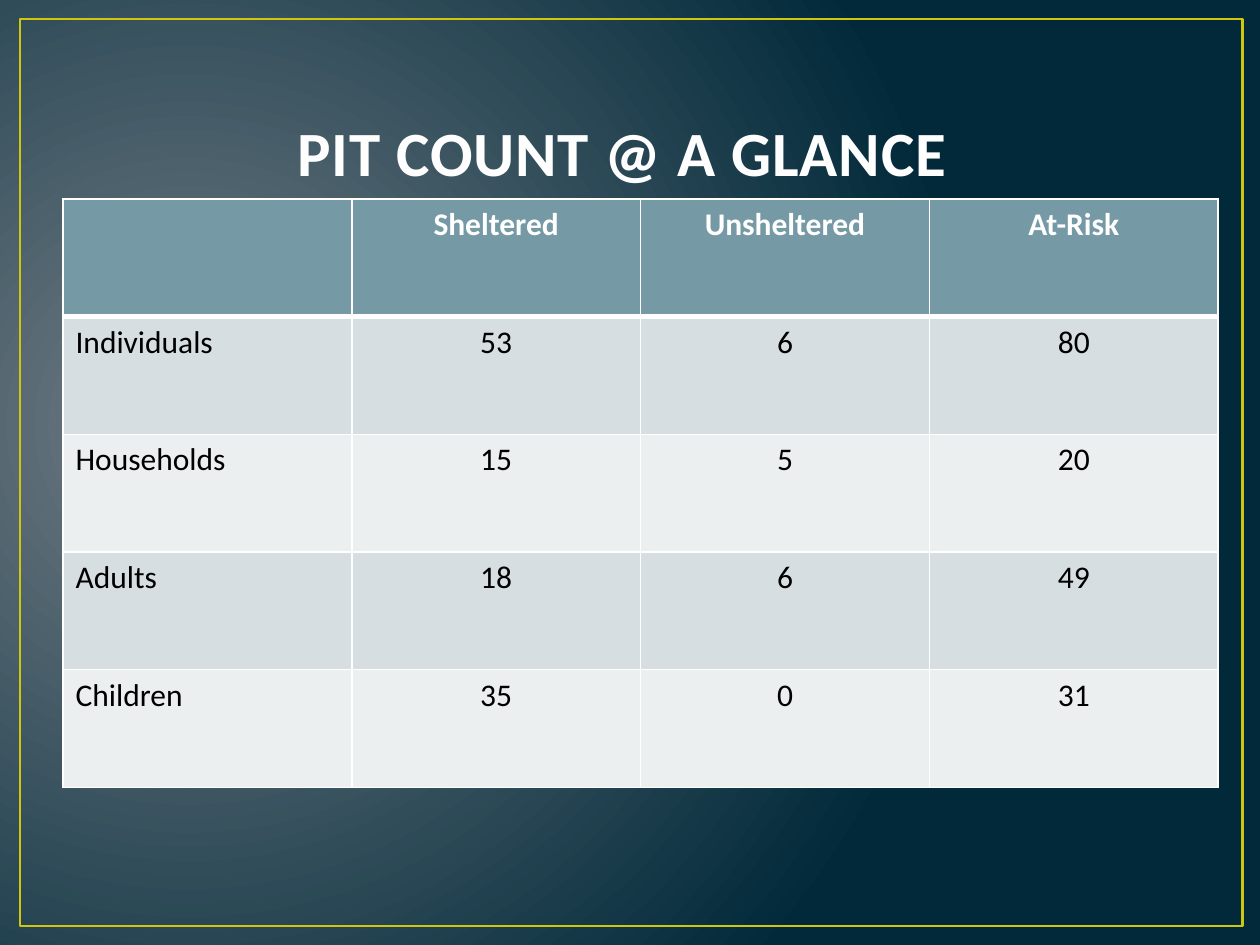
from dataclasses import dataclass

from lxml.etree import SubElement
from pptx import Presentation
from pptx.dml.color import RGBColor
from pptx.enum.shapes import MSO_SHAPE
from pptx.enum.text import MSO_ANCHOR, MSO_AUTO_SIZE, PP_ALIGN
from pptx.oxml.ns import qn
from pptx.util import Inches, Pt


@dataclass(frozen=True)
class Theme:
    font: str = "Calibri"
    title_size: float = 36
    table_size: float = 18
    glow: str = "717C84"
    night: str = "01293A"
    frame: str = "CFC60D"
    title: str = "FEFEFE"
    header: str = "759AA5"
    header_text: str = "FFFFFF"
    body_text: str = "000000"
    bands: tuple = ("D6DEE1", "ECEFF0")
    grid: str = "FFFFFF"


THEME = Theme()

COUNTS = [
    ("", "Sheltered", "Unsheltered", "At-Risk"),
    ("Individuals", "53", "6", "80"),
    ("Households", "15", "5", "20"),
    ("Adults", "18", "6", "49"),
    ("Children", "35", "0", "31"),
]


def write(text_frame, text, *, size, color, bold=False, align=PP_ALIGN.LEFT, spacing=0):
    """Put one formatted run in a text frame; spacing is in points."""
    para = text_frame.paragraphs[0]
    para.alignment = align
    span = para.add_run()
    span.text = text
    span.font.name = THEME.font
    span.font.size = Pt(size)
    span.font.bold = bold
    span.font.color.rgb = RGBColor.from_string(color)
    if spacing:
        span.font._element.set("spc", str(round(spacing * 100)))


def paint_background(page):
    """Circular gradient that glows from the left."""
    fill = page.background.fill
    fill.gradient()
    for stop, position, color in zip(fill.gradient_stops, (0, 1), (THEME.glow, THEME.night)):
        stop.position = position
        stop.color.rgb = RGBColor.from_string(color)
    gradient = page.element.find(".//" + qn("a:gradFill"))
    gradient.remove(gradient.find(qn("a:lin")))
    circle = SubElement(gradient, qn("a:path"), path="circle")
    SubElement(circle, qn("a:fillToRect"), l="15000", t="50000", r="85000", b="60000")


def add_frame(page, box):
    """Thin border placed behind the title."""
    frame = page.shapes.add_shape(MSO_SHAPE.RECTANGLE, *map(Inches, box))
    frame.shadow.inherit = False
    frame.fill.background()
    frame.line.color.rgb = RGBColor.from_string(THEME.frame)
    frame.line.width = Pt(1.5)
    page.shapes.title.element.addprevious(frame.element)


def place_title(page, box, text):
    title = page.shapes.title
    title.left, title.top, title.width, title.height = map(Inches, box)
    title.text_frame.auto_size = MSO_AUTO_SIZE.NONE
    title.text_frame.word_wrap = True
    title.text_frame.vertical_anchor = MSO_ANCHOR.BOTTOM
    write(title.text_frame, text, size=THEME.title_size, color=THEME.title,
          bold=True, align=PP_ALIGN.CENTER, spacing=0.5)


def set_borders(cell, **widths):
    """Draw the borders named L, R, T and B with widths in points."""
    properties = cell._tc.get_or_add_tcPr()
    for side, width in widths.items():
        line = SubElement(properties, qn(f"a:ln{side}"), w=str(Pt(width)))
        SubElement(SubElement(line, qn("a:solidFill")), qn("a:srgbClr"), val=THEME.grid)


def add_count_table(page, box, rows):
    table = page.shapes.add_table(len(rows), len(rows[0]), *map(Inches, box)).table
    for r, row in enumerate(rows):
        is_header = r == 0
        for c, text in enumerate(row):
            cell = table.cell(r, c)
            # Borders go before the fill in the cell properties
            set_borders(cell, L=1, R=1, T=3 if r == 1 else 1, B=3 if is_header else 1)
            cell.fill.solid()
            color = THEME.header if is_header else THEME.bands[(r - 1) % 2]
            cell.fill.fore_color.rgb = RGBColor.from_string(color)
            write(cell.text_frame, text, size=THEME.table_size, bold=is_header,
                  color=THEME.header_text if is_header else THEME.body_text,
                  align=PP_ALIGN.CENTER if c else PP_ALIGN.LEFT)


def main():
    deck = Presentation()
    deck.slide_width, deck.slide_height = Inches(10), Inches(7.5)
    page = deck.slides.add_slide(deck.slide_layouts[5])
    paint_background(page)
    add_frame(page, (0.16, 0.15, 9.7, 7.2))
    place_title(page, (0.5, 0.3, 9, 1.25), "PIT COUNT @ A GLANCE ")
    add_count_table(page, (0.5, 1.58, 9.17, 4.67), COUNTS)
    deck.save("out.pptx")


if __name__ == "__main__":
    main()
